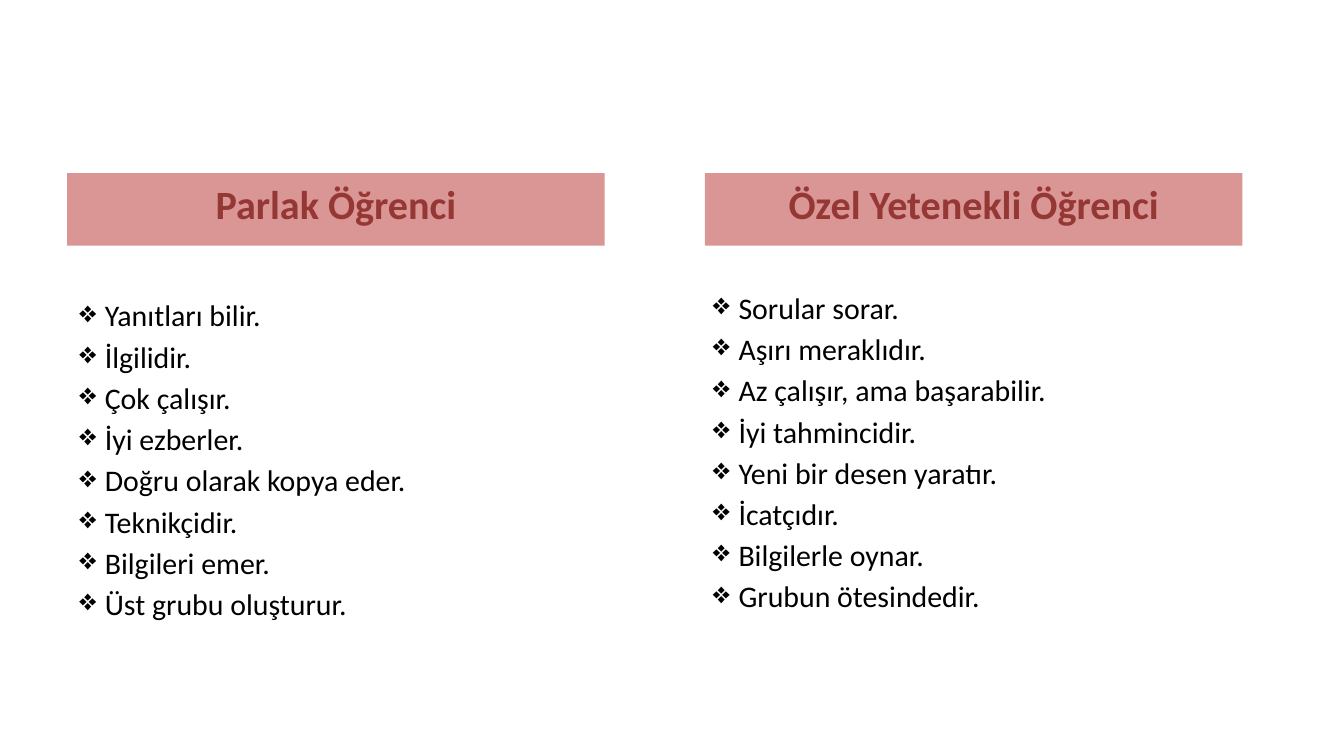
from dataclasses import dataclass

from lxml.etree import SubElement
from pptx import Presentation
from pptx.dml.color import RGBColor
from pptx.enum.shapes import MSO_SHAPE
from pptx.enum.text import MSO_ANCHOR, PP_ALIGN
from pptx.oxml.ns import qn
from pptx.slide import Slide
from pptx.text.text import TextFrame, _Paragraph
from pptx.util import Inches, Pt

SLIDE_WIDTH, SLIDE_HEIGHT = Inches(20), Inches(11.25)
ROSE = RGBColor(0xD9, 0x96, 0x94)
DARK_RED = RGBColor(0x95, 0x37, 0x35)
BLACK = RGBColor(0, 0, 0)
FONT = "Calibri"
HEADING_TOP, HEADING_WIDTH, HEADING_HEIGHT = 0.229, 0.4, 0.096
TRAITS_WIDTH = 0.4645
HANGING_INDENT = Inches(0.38)


@dataclass(frozen=True)
class StudentProfile:
    heading: str
    heading_left: float
    traits_left: float
    traits_top: float
    traits_height: float
    traits: tuple[str, ...]


PROFILES = (
    StudentProfile(
        "Parlak Öğrenci", 0.05, 0.05, 0.385, 0.58,
        (
            "Yanıtları bilir.",
            "İlgilidir.",
            "Çok çalışır.",
            "İyi ezberler.",
            "Doğru olarak kopya eder.",
            "Teknikçidir.",
            "Bilgileri emer.",
            "Üst grubu oluşturur.",
        ),
    ),
    StudentProfile(
        "Özel Yetenekli Öğrenci", 0.5245, 0.5215, 0.375, 0.612,
        (
            "Sorular sorar.",
            "Aşırı meraklıdır.",
            "Az çalışır, ama başarabilir.",
            "İyi tahmincidir.",
            "Yeni bir desen yaratır.",
            "İcatçıdır.",
            "Bilgilerle oynar.",
            "Grubun ötesindedir.",
        ),
    ),
)


def place(left: float, top: float, width: float, height: float) -> tuple[int, ...]:
    return (
        int(left * SLIDE_WIDTH),
        int(top * SLIDE_HEIGHT),
        int(width * SLIDE_WIDTH),
        int(height * SLIDE_HEIGHT),
    )


def set_up_frame(frame: TextFrame) -> None:
    frame.word_wrap = True
    frame.vertical_anchor = MSO_ANCHOR.TOP
    frame.margin_left = frame.margin_right = Inches(0.18)
    frame.margin_top = frame.margin_bottom = Inches(0.09)


def write(paragraph: _Paragraph, text: str, size: int, color: RGBColor, bold: bool) -> None:
    paragraph.text = text
    paragraph.space_before = Pt(size * 0.18)
    paragraph.font.name = FONT
    paragraph.font.size = Pt(size)
    paragraph.font.bold = bold
    paragraph.font.color.rgb = color


def add_bullet(paragraph: _Paragraph) -> None:
    properties = paragraph._p.get_or_add_pPr()
    properties.set("marL", str(HANGING_INDENT))
    properties.set("indent", str(-HANGING_INDENT))
    SubElement(properties, qn("a:buChar")).set("char", "❖")


def add_heading(slide: Slide, profile: StudentProfile) -> None:
    banner = slide.shapes.add_shape(
        MSO_SHAPE.RECTANGLE,
        *place(profile.heading_left, HEADING_TOP, HEADING_WIDTH, HEADING_HEIGHT),
    )
    banner.shadow.inherit = False
    banner.fill.solid()
    banner.fill.fore_color.rgb = ROSE
    banner.line.fill.background()
    set_up_frame(banner.text_frame)
    title = banner.text_frame.paragraphs[0]
    write(title, profile.heading, 43, DARK_RED, True)
    title.alignment = PP_ALIGN.CENTER


def add_traits(slide: Slide, profile: StudentProfile) -> None:
    frame = slide.shapes.add_textbox(
        *place(profile.traits_left, profile.traits_top, TRAITS_WIDTH, profile.traits_height)
    ).text_frame
    set_up_frame(frame)
    for index, trait in enumerate(profile.traits):
        paragraph = frame.add_paragraph() if index else frame.paragraphs[0]
        write(paragraph, trait, 32, BLACK, False)
        add_bullet(paragraph)


def main() -> None:
    presentation = Presentation()
    presentation.slide_width = SLIDE_WIDTH
    presentation.slide_height = SLIDE_HEIGHT
    slide = presentation.slides.add_slide(presentation.slide_layouts[6])
    for profile in PROFILES:
        add_heading(slide, profile)
        add_traits(slide, profile)
    presentation.save("out.pptx")


if __name__ == "__main__":
    main()
